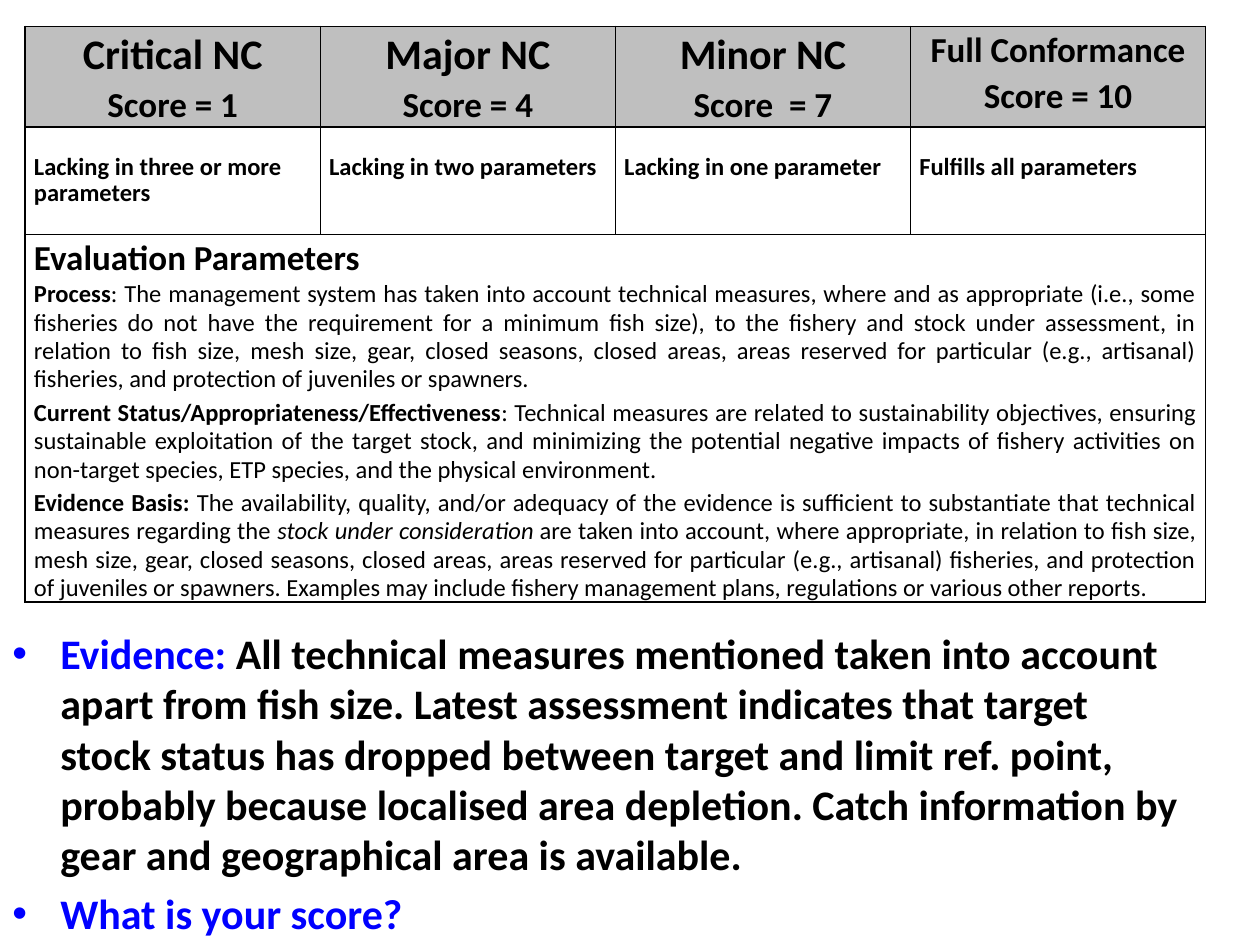
from dataclasses import dataclass

from lxml.etree import SubElement
from pptx import Presentation
from pptx.dml.color import RGBColor
from pptx.enum.text import PP_ALIGN
from pptx.oxml.ns import qn
from pptx.util import Inches, Pt


@dataclass(frozen=True)
class Theme:
    font: str = "Calibri"
    ink: str = "000000"
    accent: str = "0000FF"
    header_fill: str = "BFBFBF"
    large: int = 24
    medium: int = 20
    body: int = 14
    border: int = 1


THEME = Theme()


@dataclass(frozen=True)
class Run:
    text: str
    size: int = THEME.body
    bold: bool = False
    italic: bool = False
    color: str = THEME.ink


@dataclass(frozen=True)
class Para:
    runs: tuple[Run, ...]
    align: PP_ALIGN = PP_ALIGN.LEFT
    line: float = 1.0
    before: float = 0
    after: float = 0
    bullet: bool = False


@dataclass(frozen=True)
class Level:
    title: str
    title_size: int
    score: str
    rule: str


LEVELS = (
    Level("Critical NC", THEME.large, "Score = 1", "Lacking in three or more parameters"),
    Level("Major NC", THEME.large, "Score = 4", "Lacking in two parameters"),
    Level("Minor NC", THEME.large, "Score  = 7", "Lacking in one parameter"),
    Level("Full Conformance", THEME.medium, "Score = 10", "Fulfills all parameters"),
)

PARAMETERS = (
    (
        Run("Process", bold=True),
        Run(": The management system has taken into account technical measures, where and as "
            "appropriate (i.e., some fisheries do not have the requirement for a minimum fish size), "
            "to the fishery and stock under assessment, in relation to fish size, mesh size, gear, "
            "closed seasons, closed areas, areas reserved for particular (e.g., artisanal) fisheries, "
            "and protection of juveniles or spawners."),
    ),
    (
        Run("Current Status/Appropriateness/Effectiveness", bold=True),
        Run(": Technical measures are related to sustainability objectives, ensuring sustainable "
            "exploitation of the target stock, and minimizing the potential negative impacts of "
            "fishery activities on non-target species, ETP species, and the physical environment."),
    ),
    (
        Run("Evidence Basis: ", bold=True),
        Run("The availability, quality, and/or adequacy of the evidence is sufficient to "
            "substantiate that technical measures regarding the "),
        Run("stock under consideration", italic=True),
        Run(" ", size=12),
        Run("are taken into account, where appropriate, in relation to fish size, mesh size, gear, "
            "closed seasons, closed areas, areas reserved for particular (e.g., artisanal) fisheries, "
            "and protection of juveniles or spawners. Examples may include fishery management plans, "
            "regulations or various other reports."),
    ),
)

FINDINGS = (
    (
        Run("Evidence: ", THEME.large, True, color=THEME.accent),
        Run("All technical measures mentioned taken into account apart from fish size. Latest "
            "assessment indicates that target stock status has dropped between target and limit "
            "ref. point, probably because localised area depletion. Catch information by gear and "
            "geographical area is available.", THEME.large, True),
    ),
    (Run("What is your score?", THEME.large, True, color=THEME.accent),),
)


def write(frame, paras: list[Para]) -> None:
    frame.word_wrap = True
    for index, para in enumerate(paras):
        paragraph = frame.add_paragraph() if index else frame.paragraphs[0]
        paragraph.alignment = para.align
        paragraph.line_spacing = para.line
        paragraph.space_before = Pt(para.before)
        paragraph.space_after = Pt(para.after)
        if para.bullet:
            props = paragraph._p.get_or_add_pPr()
            props.set("marL", str(Inches(0.38)))
            props.set("indent", str(-Inches(0.38)))
            SubElement(props, qn("a:buFont"), typeface="Arial")
            SubElement(props, qn("a:buChar"), char="•")
        for part in para.runs:
            run = paragraph.add_run()
            run.text = part.text
            run.font.name = THEME.font
            run.font.size = Pt(part.size)
            run.font.bold = part.bold
            run.font.italic = part.italic
            run.font.color.rgb = RGBColor.from_string(part.color)


def style_cell(cell, fill: str | None) -> None:
    cell.margin_left = cell.margin_right = Inches(0.07)
    cell.margin_top = cell.margin_bottom = 0
    props = cell._tc.get_or_add_tcPr()
    for side in ("lnL", "lnR", "lnT", "lnB"):
        line = SubElement(props, qn(f"a:{side}"), w=str(Pt(THEME.border)))
        SubElement(SubElement(line, qn("a:solidFill")), qn("a:srgbClr"), val=THEME.ink)
    if fill:
        cell.fill.solid()
        cell.fill.fore_color.rgb = RGBColor.from_string(fill)
    else:
        cell.fill.background()


def add_score_table(slide) -> None:
    heights = (0.8, 0.85, 2.92)
    width = 9.37
    table = slide.shapes.add_table(len(heights), len(LEVELS), Inches(0.2), Inches(0.21),
                                   Inches(width), Inches(sum(heights))).table
    table.first_row = table.horz_banding = False
    for column in table.columns:
        column.width = Inches(width / len(LEVELS))
    for index, height in enumerate(heights):
        table.rows[index].height = Inches(height)
        for cell in table.rows[index].cells:
            style_cell(cell, None if index else THEME.header_fill)

    # Score levels and what each one means
    for column, level in enumerate(LEVELS):
        write(table.cell(0, column).text_frame, [
            Para((Run(level.title, level.title_size, True),), PP_ALIGN.CENTER, 1.07),
            Para((Run(level.score, THEME.medium, True),), PP_ALIGN.CENTER, 1.07, after=6),
        ])
        meaning = table.cell(1, column)
        meaning.margin_top = Inches(0.21)
        write(meaning.text_frame, [Para((Run(level.rule, bold=True),), line=0.9)])

    # Evaluation parameters across the full width
    evaluation = table.cell(2, 0)
    evaluation.merge(table.cell(2, len(LEVELS) - 1))
    heading = Para((Run("Evaluation Parameters", THEME.medium, True),), PP_ALIGN.JUSTIFY, 1.07, before=1)
    write(evaluation.text_frame, [heading] + [
        Para(runs, PP_ALIGN.JUSTIFY, 0.95, after=3) for runs in PARAMETERS])


def add_findings(slide) -> None:
    findings = slide.shapes.add_textbox(Inches(0), Inches(4.93), Inches(9.45), Inches(1.81))
    write(findings.text_frame, [Para(runs, before=4.8, bullet=True) for runs in FINDINGS])


def main() -> None:
    deck = Presentation()
    deck.slide_width, deck.slide_height = Inches(10), Inches(7.5)
    slide = deck.slides.add_slide(deck.slide_layouts[6])
    add_findings(slide)
    add_score_table(slide)
    deck.save("out.pptx")


if __name__ == "__main__":
    main()
